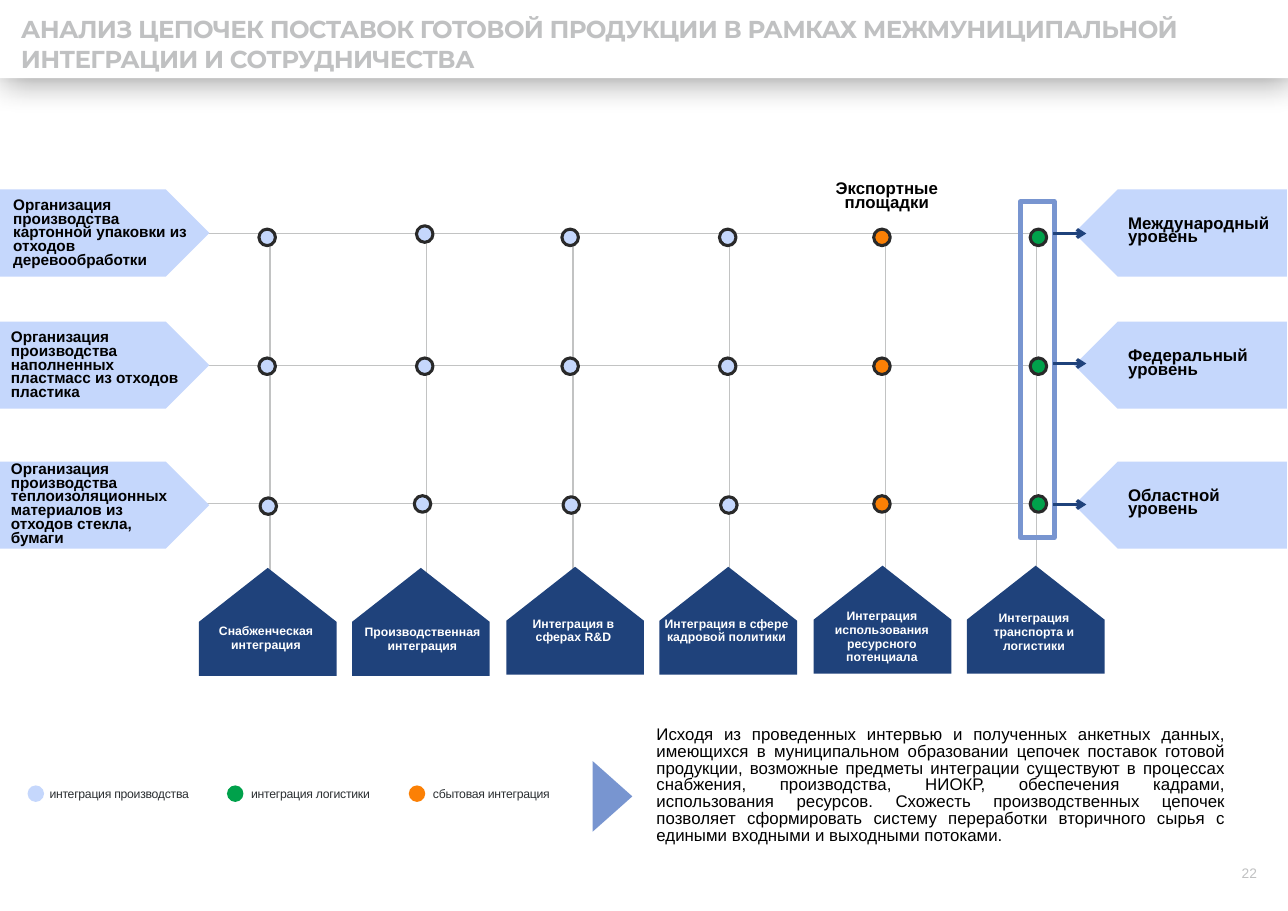
import pptx
import pptx.dml.color
import pptx.enum.shapes
import pptx.enum.text
import pptx.oxml
import pptx.oxml.ns
import pptx.util

RGBColor = pptx.dml.color.RGBColor
SHAPE = pptx.enum.shapes.MSO_SHAPE
ALIGN = pptx.enum.text.PP_ALIGN
ANCHOR = pptx.enum.text.MSO_ANCHOR

PX = 9144
WHITE = RGBColor(0xFF, 0xFF, 0xFF)
BLACK = RGBColor(0x00, 0x00, 0x00)
NAVY = RGBColor(0x1F, 0x42, 0x7B)
STEEL = RGBColor(0x78, 0x95, 0xD0)
PALE = RGBColor(0xC5, 0xD7, 0xFC)
GREEN = RGBColor(0x00, 0xA1, 0x4B)
ORANGE = RGBColor(0xFB, 0x80, 0x05)
INK = RGBColor(0x29, 0x29, 0x29)
LEGEND = RGBColor(0x2B, 0x2F, 0x32)
GREY = RGBColor(0xC0, 0xC1, 0xC2)
GRID = RGBColor(0xC2, 0xC3, 0xC3)

DRAWING_NS = pptx.oxml.ns.nsdecls("a")


class Board:
    font = "Arial"

    def __init__(self, prs):
        self.slide = prs.slides.add_slide(prs.slide_layouts[5])
        self.shapes = self.slide.shapes

    def box(self, *lengths):
        return [pptx.util.Emu(n * PX) for n in lengths]

    def paint(self, sp, fill, line, weight):
        sp.shadow.inherit = False
        if fill is None:
            sp.fill.background()
        else:
            sp.fill.solid()
            sp.fill.fore_color.rgb = fill
        if line is None:
            sp.line.fill.background()
        else:
            sp.line.color.rgb = line
            sp.line.width = pptx.util.Pt(weight)
        return sp

    def shape(self, kind, x, y, w, h, fill=None, line=None, weight=1):
        return self.paint(self.shapes.add_shape(kind, *self.box(x, y, w, h)), fill, line, weight)

    def freeform(self, points, fill):
        builder = self.shapes.build_freeform(*points[0], scale=PX)
        builder.add_line_segments(points[1:], close=True)
        return self.paint(builder.convert_to_shape(), fill, None, 1)

    def set_text(self, sp, text, size, color, bold=False, align=ALIGN.LEFT, anchor=ANCHOR.TOP,
                 insets=(6, 6, 6, 6), leading=None, before=0, spc=0, font=None):
        tf = sp.text_frame
        tf.word_wrap = True
        tf.auto_size = pptx.enum.text.MSO_AUTO_SIZE.NONE
        tf.vertical_anchor = anchor
        tf.margin_left, tf.margin_top, tf.margin_right, tf.margin_bottom = self.box(*insets)
        p = tf.paragraphs[0]
        p.alignment = align
        p.space_before = pptx.util.Pt(before)
        if leading:
            p.line_spacing = pptx.util.Pt(leading)
        for i, part in enumerate(text.split("\n")):
            if i:
                p.add_line_break()
            r = p.add_run()
            r.text = part
            r.font.name = font or self.font
            r.font.size = pptx.util.Pt(size)
            r.font.bold = bold
            r.font.color.rgb = color
            if spc:
                r._r.get_or_add_rPr().set("spc", str(spc))

    def text(self, x, y, w, h, text, size, color, **style):
        self.set_text(self.shapes.add_textbox(*self.box(x, y, w, h)), text, size, color, **style)

    def title(self, x, y, w, h, text, size, color, **style):
        sp = self.shapes.title
        sp.left, sp.top, sp.width, sp.height = self.box(x, y, w, h)
        self.shapes._spTree.append(sp._element)
        self.set_text(sp, text, size, color, **style)

    def arrow(self, x1, y1, x2, y2, color, weight):
        cn = self.shapes.add_connector(pptx.enum.shapes.MSO_CONNECTOR.STRAIGHT,
                                       *self.box(x1, y1, x2, y2))
        cn.line.color.rgb = color
        cn.line.width = pptx.util.Pt(weight)
        cn.line._get_or_add_ln().append(
            pptx.oxml.parse_xml(f'<a:tailEnd {DRAWING_NS} type="arrow"/>'))
        cn._element.spPr.append(pptx.oxml.parse_xml(f"<a:effectLst {DRAWING_NS}/>"))

    def grid(self, x, y, widths, heights):
        frame = self.shapes.add_table(len(heights), len(widths),
                                      *self.box(x, y, sum(widths), sum(heights)))
        table = frame.table
        table.first_row = table.horz_banding = False
        for column, width in zip(table.columns, widths):
            column.width = pptx.util.Emu(width * PX)
        for j, height in enumerate(heights):
            table.rows[j].height = pptx.util.Emu(height * PX)
            for i in range(len(widths)):
                cell = table.cell(j, i)
                sides = {"L": GRID if i else WHITE, "R": GRID, "T": GRID,
                         "B": WHITE if j == len(heights) - 1 else GRID}
                tcPr = cell._tc.get_or_add_tcPr()
                for side, color in sides.items():
                    tcPr.append(pptx.oxml.parse_xml(
                        f'<a:ln{side} {DRAWING_NS} w="12700"><a:solidFill>'
                        f'<a:srgbClr val="{color}"/></a:solidFill></a:ln{side}>'))
                cell.fill.background()

    def drop_shadow(self, sp, color, alpha, blur, dist, angle):
        effects = sp._element.spPr.find(pptx.oxml.ns.qn("a:effectLst"))
        effects.append(pptx.oxml.parse_xml(
            f'<a:outerShdw {DRAWING_NS} blurRad="{blur * 12700}" dist="{dist * 12700}" '
            f'dir="{angle * 60000}" rotWithShape="0"><a:srgbClr val="{color}">'
            f'<a:alpha val="{alpha * 1000}"/></a:srgbClr></a:outerShdw>'))


def main():
    prs = pptx.Presentation()
    prs.slide_width = pptx.util.Emu(1169 * PX)
    prs.slide_height = pptx.util.Emu(827 * PX)
    s = Board(prs)

    s.freeform([(538, 691), (538, 755), (574, 723)], STEEL)
    s.grid(184, 212, [61, 142, 133, 142, 142, 137], [120, 125, 149])

    for i in range(6):
        house = s.shape(SHAPE.PENTAGON, round(194 + i * 139.4), 502 - i // 2, 98, 125, NAVY)
        house.rotation = 270
    integrations = [
        (180, 561, 123, 37, "Снабженческая интеграция"),
        (322, 562, 123, 37, "Производственная\nинтеграция"),
        (458, 554, 125, 37, "Интеграция в сферах R&D"),
        (597, 554, 125, 37, "Интеграция в сфере кадровой политики"),
        (738, 547, 125, 62, "Интеграция использования ресурсного потенциала"),
        (876, 549, 125, 50, "Интеграция транспорта и логистики"),
    ]
    for x, y, w, h, label in integrations:
        s.text(x, y, w, h, label, 8, WHITE, bold=True, align=ALIGN.CENTER, leading=9)
    s.text(727, 161, 156, 38, "Экспортные площадки", 11, BLACK, bold=True,
           align=ALIGN.CENTER, anchor=ANCHOR.MIDDLE, leading=9)

    s.shape(SHAPE.RECTANGLE, 926, 183, 31, 305, line=STEEL, weight=3)
    columns = [(235, PALE), (378, PALE), (510, PALE), (653, PALE), (793, ORANGE), (935, GREEN)]
    nudges = {(1, 0): (0, -3), (0, 2): (1, 2), (1, 2): (-2, 0), (2, 2): (1, 1), (3, 2): (1, 1)}
    for i, (x, color) in enumerate(columns):
        for j, y in enumerate([208, 325, 450]):
            dx, dy = nudges.get((i, j), (0, 0))
            s.shape(SHAPE.OVAL, x + dx, y + dy, 15, 15, color, INK, 2)

    legend = [(25, 44, PALE, "интеграция производства"),
              (206, 227, GREEN, "интеграция логистики"),
              (371, 392, ORANGE, "сбытовая интеграция")]
    for dot_x, text_x, color, label in legend:
        s.shape(SHAPE.OVAL, dot_x, 713, 15, 15, color)
        s.text(text_x, 713, 144, 15, label, 8, LEGEND, insets=(1, 3, 0, 0),
               leading=8, before=2.4, spc=-20)

    s.text(586, 655, 536, 118,
           "Исходя из проведенных интервью и полученных анкетных данных, имеющихся в "
           "муниципальном образовании цепочек поставок готовой продукции, возможные предметы "
           "интеграции существуют в процессах снабжения, производства, НИОКР, обеспечения "
           "кадрами, использования ресурсов. Схожесть производственных цепочек позволяет "
           "сформировать систему переработки вторичного сырья с едиными входными и выходными "
           "потоками.", 11, BLACK, align=ALIGN.JUSTIFY, insets=(10, 5, 10, 5), leading=11)

    header = s.shape(SHAPE.RECTANGLE, 0, 0, 1169, 71, WHITE)
    s.drop_shadow(header, BLACK, 40, 22, 3, 45)

    levels = [
        (172, 12, 175, "Организация производства картонной упаковки из отходов деревообработки",
         192, "Международный уровень", 212),
        (292, 10, 295, "Организация производства наполненных пластмасс из отходов пластика",
         312, "Федеральный уровень", 330),
        (419, 10, 421, "Организация производства теплоизоляционных материалов из отходов "
         "стекла, бумаги", 439, "Областной уровень", 458),
    ]
    for y, product_x, product_y, product, level_y, level, arrow_y in levels:
        s.shape(SHAPE.PENTAGON, -3, y, 193, 79, PALE)
        plate = s.shape(SHAPE.PENTAGON, 975, y, 193, 79, PALE)
        plate._element.spPr.get_or_add_xfrm().set("flipH", "1")
        s.text(product_x, product_y, 166, 75, product, 10, BLACK, bold=True,
               anchor=ANCHOR.MIDDLE, insets=(0, 5, 6, 5), leading=9)
        s.text(1018, level_y, 150, 38, level, 11, BLACK, bold=True,
               anchor=ANCHOR.MIDDLE, leading=9)
        s.arrow(956, arrow_y, 986, arrow_y, NAVY, 2)

    s.text(1120, 780, 48, 47, "22", 9, GREY, insets=(7, 5, 10, 5), before=2.1)
    s.title(18, 12, 1119, 55, "АНАЛИЗ ЦЕПОЧЕК ПОСТАВОК ГОТОВОЙ ПРОДУКЦИИ В РАМКАХ "
            "МЕЖМУНИЦИПАЛЬНОЙ ИНТЕГРАЦИИ И СОТРУДНИЧЕСТВА", 16, GREY, bold=True,
            insets=(1, 1, 0, 0), before=1, spc=-40, font="Montserrat")

    prs.save("out.pptx")


if __name__ == "__main__":
    main()
